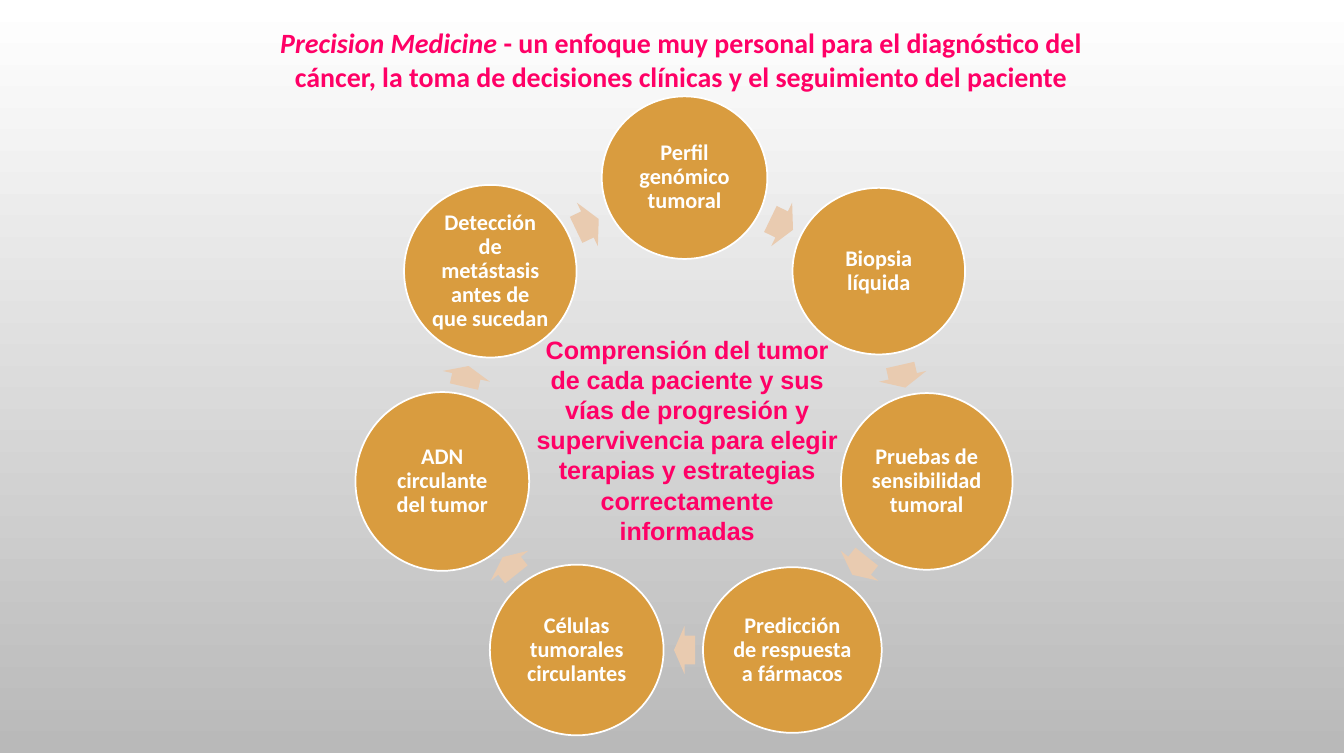
from dataclasses import dataclass
from math import cos, pi, sin

from pptx import Presentation
from pptx.dml.color import RGBColor
from pptx.enum.shapes import MSO_SHAPE
from pptx.enum.text import MSO_ANCHOR, MSO_AUTO_SIZE, PP_ALIGN
from pptx.slide import Slide
from pptx.text.text import Font, TextFrame
from pptx.util import Pt


@dataclass(frozen=True)
class Theme:
    bg_top: str = "FFFFFF"
    bg_bottom: str = "B9B9B9"
    accent: str = "FF0066"
    step: str = "D99C3F"
    arrow: str = "E9CBB0"
    light: str = "FFFFFF"
    title_font: str = "Calibri"
    core_font: str = "Arial"
    title_size: float = 20
    core_size: float = 18
    step_size: float = 16


@dataclass(frozen=True)
class Step:
    label: str
    width: float
    height: float
    arrow_length: float


THEME = Theme()
CENTER_X, CENTER_Y, RADIUS = 491, 305.6, 178.2
ARROW_HEIGHT = 34.6
STEPS = [
    Step("Perfil genómico tumoral", 118.8, 116.6, 18),
    Step("Biopsia líquida", 123.8, 119.5, 16.6),
    Step("Pruebas de sensibilidad tumoral", 123.1, 126.7, 16.6),
    Step("Predicción de respuesta a fármacos", 128.2, 118.8, 15.1),
    Step("Células tumorales circulantes", 124.6, 122.4, 15.8),
    Step("ADN circulante del tumor", 124.6, 128.2, 15.1),
    Step("Detección de metástasis antes de que sucedan", 123.8, 123.8, 18),
]
TITLE_LEAD = "Precision Medicine"
TITLE_REST = (" - un enfoque muy personal para el diagnóstico del cáncer, "
              "la toma de decisiones clínicas y el seguimiento del paciente")
CORE_TEXT = ("Comprensión del tumor de cada paciente y sus vías de progresión y "
             "supervivencia para elegir terapias y estrategias correctamente informadas")


def rgb(color: str) -> RGBColor:
    return RGBColor.from_string(color)


def style_font(font: Font, name: str, size: float, color: str) -> None:
    font.name, font.size, font.bold = name, Pt(size), True
    font.color.rgb = rgb(color)


def fill_background(s: Slide) -> None:
    fill = s.background.fill
    fill.gradient()
    fill.gradient_angle = 270
    for stop, color in zip(fill.gradient_stops, (THEME.bg_top, THEME.bg_bottom)):
        stop.color.rgb = rgb(color)
    fill.gradient_stops[0].position = 0
    fill.gradient_stops[1].position = 1


def set_frame(tf: TextFrame, anchor: MSO_ANCHOR) -> None:
    tf.word_wrap = True
    tf.auto_size = MSO_AUTO_SIZE.NONE
    tf.vertical_anchor = anchor


def add_title(s: Slide) -> None:
    sp = s.shapes.title
    sp.left, sp.top, sp.width, sp.height = Pt(185), Pt(15.1), Pt(607), Pt(55.4)
    set_frame(sp.text_frame, MSO_ANCHOR.TOP)
    p = sp.text_frame.paragraphs[0]
    p.alignment = PP_ALIGN.CENTER
    for text, italic in ((TITLE_LEAD, True), (TITLE_REST, False)):
        r = p.add_run()
        r.text = text
        style_font(r.font, THEME.title_font, THEME.title_size, THEME.accent)
        r.font.italic = italic


def add_ring_shape(s: Slide, kind: MSO_SHAPE, angle: float, radius: float,
                   width: float, height: float, color: str):
    """Centre a filled shape on the ring, with the angle clockwise from the top."""
    x, y = CENTER_X + radius * sin(angle), CENTER_Y - radius * cos(angle)
    sp = s.shapes.add_shape(kind, Pt(x - width / 2), Pt(y - height / 2),
                            Pt(width), Pt(height))
    sp.shadow.inherit = False
    sp.fill.solid()
    sp.fill.fore_color.rgb = rgb(color)
    return sp


def add_step(s: Slide, step: Step, angle: float) -> None:
    sp = add_ring_shape(s, MSO_SHAPE.OVAL, angle, RADIUS,
                        step.width, step.height, THEME.step)
    sp.line.color.rgb = rgb(THEME.light)
    sp.line.width = Pt(1.25)
    tf = sp.text_frame
    set_frame(tf, MSO_ANCHOR.MIDDLE)
    tf.margin_left = tf.margin_right = tf.margin_top = tf.margin_bottom = Pt(1.5)
    tf.text = step.label
    p = tf.paragraphs[0]
    p.alignment, p.line_spacing = PP_ALIGN.CENTER, 0.9
    style_font(p.runs[0].font, THEME.title_font, THEME.step_size, THEME.light)


def add_arrow(s: Slide, length: float, angle: float, half_step: float) -> None:
    sp = add_ring_shape(s, MSO_SHAPE.RIGHT_ARROW, angle, RADIUS * cos(half_step),
                        length, ARROW_HEIGHT, THEME.arrow)
    sp.adjustments[0], sp.adjustments[1] = 0.6, 0.5
    sp.line.fill.background()
    sp.rotation = angle * 180 / pi


def add_core(s: Slide) -> None:
    tf = s.shapes.add_textbox(Pt(376.6), Pt(236.2), Pt(232.6), Pt(159.8)).text_frame
    set_frame(tf, MSO_ANCHOR.TOP)
    tf.text = CORE_TEXT
    p = tf.paragraphs[0]
    p.alignment = PP_ALIGN.CENTER
    style_font(p.runs[0].font, THEME.core_font, THEME.core_size, THEME.accent)


def main() -> None:
    prs = Presentation()
    prs.slide_width, prs.slide_height = Pt(964), Pt(540)
    s = prs.slides.add_slide(prs.slide_layouts[5])
    fill_background(s)
    add_title(s)
    half_step = pi / len(STEPS)
    for i, step in enumerate(STEPS):
        angle = 2 * half_step * i
        add_step(s, step, angle)
        add_arrow(s, step.arrow_length, angle + half_step, half_step)
    add_core(s)
    prs.save("out.pptx")


if __name__ == "__main__":
    main()
